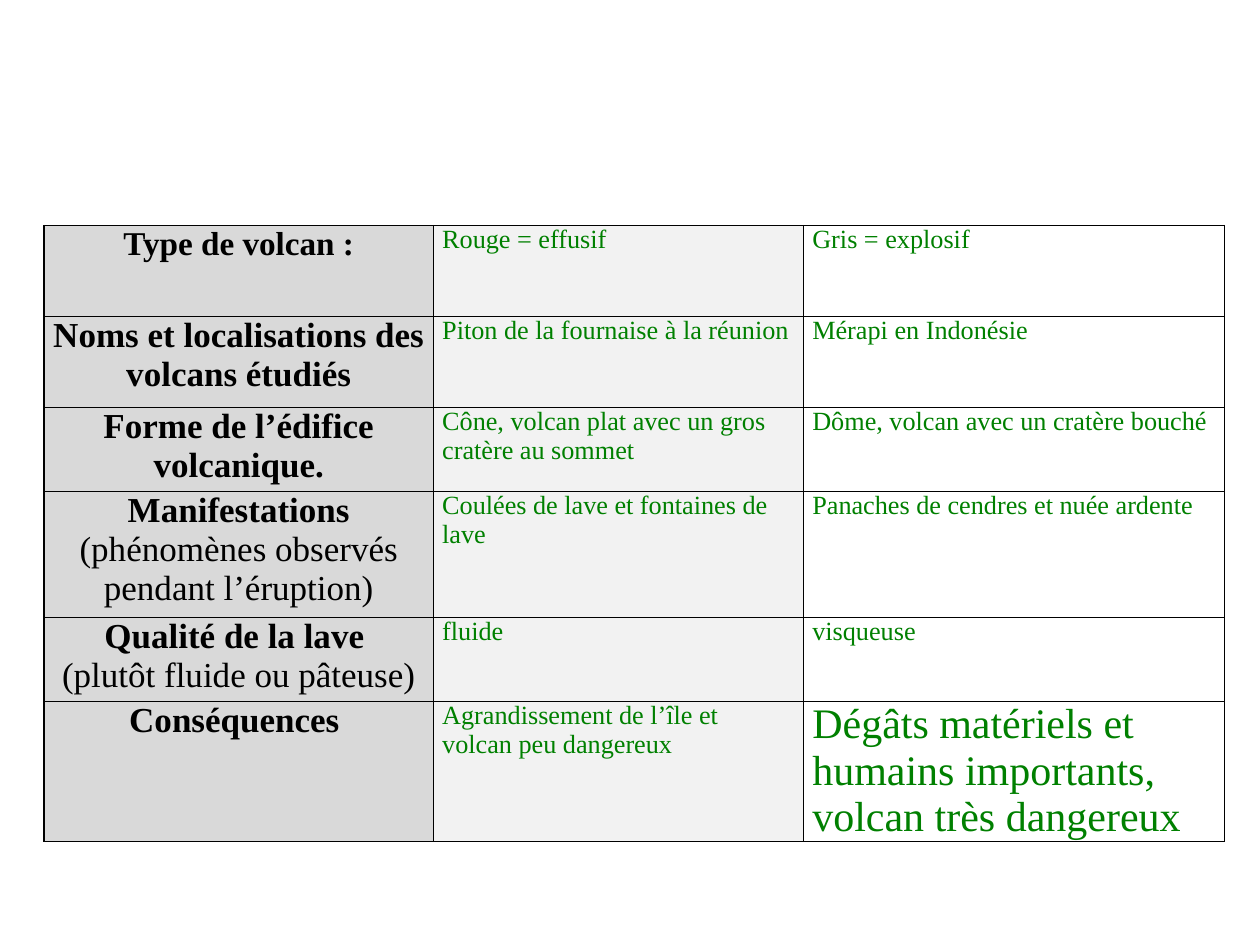
import pptx
import pptx.util
import pptx.dml.color
import pptx.enum.text
import pptx.oxml

Pt = pptx.util.Pt
RGB = pptx.dml.color.RGBColor.from_string
CENTER = pptx.enum.text.PP_ALIGN.CENTER
LEFT = pptx.enum.text.PP_ALIGN.LEFT

FONT = "Times New Roman"
HUES = {"ink": "000000", "green": "008000", "label": "D9D9D9", "red": "F2F2F2"}
COLS = [222.5, 211.5, 240.5]
ROWS = [52, 52, 48, 72, 48, 80]
HEADS = [
    [[("Type de volcan :", True)]],
    [[("Noms et localisations des volcans étudiés", True)]],
    [[("Forme de l’édifice volcanique.", True)]],
    [[("Manifestations ", True), ("(phénomènes observés pendant l’éruption)", False)]],
    [[("Qualité de la lave ", True)], [("(plutôt fluide ou pâteuse)", False)]],
    [[("Conséquences ", True)]],
]
FACTS = [
    ("Rouge = effusif", "Gris = explosif"),
    ("Piton de la fournaise à la réunion", "Mérapi en Indonésie"),
    ("Cône, volcan plat avec un gros cratère au sommet",
     "Dôme, volcan avec un cratère bouché"),
    ("Coulées de lave et fontaines de lave", "Panaches de cendres et nuée ardente"),
    ("fluide", "visqueuse"),
    ("Agrandissement de l’île et volcan peu dangereux",
     "Dégâts matériels et humains importants, volcan très dangereux"),
]


def write(frame, paras, size=15, hue="green", align=LEFT):
    for i, runs in enumerate(paras):
        para = frame.paragraphs[0] if i == 0 else frame.add_paragraph()
        para.alignment = align
        for text, bold in runs:
            run = para.add_run()
            run.text = text
            font = run.font
            font.name, font.size, font.bold = FONT, Pt(size), bold
            font.color.rgb = RGB(HUES[hue])


def style(cell, fill=None):
    cell.margin_left = cell.margin_right = Pt(5)
    cell.margin_top = cell.margin_bottom = Pt(0)
    props = cell._tc.get_or_add_tcPr()
    for side in ("lnL", "lnR", "lnT", "lnB"):
        props.append(pptx.oxml.parse_xml(
            f'<a:{side} xmlns:a="http://schemas.openxmlformats.org/drawingml/2006/main" '
            f'w="{Pt(1)}"><a:solidFill><a:srgbClr val="{HUES["ink"]}"/>'
            f'</a:solidFill></a:{side}>'))
    if fill:
        cell.fill.solid()
        cell.fill.fore_color.rgb = RGB(HUES[fill])
    else:
        cell.fill.background()


def grid(slide, left, top, width, height):
    table = slide.shapes.add_table(
        len(ROWS), len(COLS), Pt(left), Pt(top), Pt(width), Pt(height)).table
    table.first_row = table.horz_banding = False
    for col, span in zip(table.columns, COLS):
        col.width = Pt(span * width / sum(COLS))
    for row, span in zip(table.rows, ROWS):
        row.height = Pt(span * height / sum(ROWS))
    for r, (head, facts) in enumerate(zip(HEADS, FACTS)):
        cells = table.rows[r].cells
        for cell, fill in zip(cells, ("label", "red", None)):
            style(cell, fill)
        write(cells[0].text_frame, head, size=19 if r == 0 else 20,
              hue="ink", align=CENTER)
        for c, text in enumerate(facts, 1):
            last = (r, c) == (len(ROWS) - 1, len(COLS) - 1)
            write(cells[c].text_frame, [[(text, False)]], size=24 if last else 15)


def main():
    deck = pptx.Presentation()
    deck.slide_width, deck.slide_height = Pt(720), Pt(540)
    slide = deck.slides.add_slide(deck.slide_layouts[6])
    grid(slide, 25.2, 128.9, sum(COLS), sum(ROWS))
    deck.save("out.pptx")


if __name__ == "__main__":
    main()
